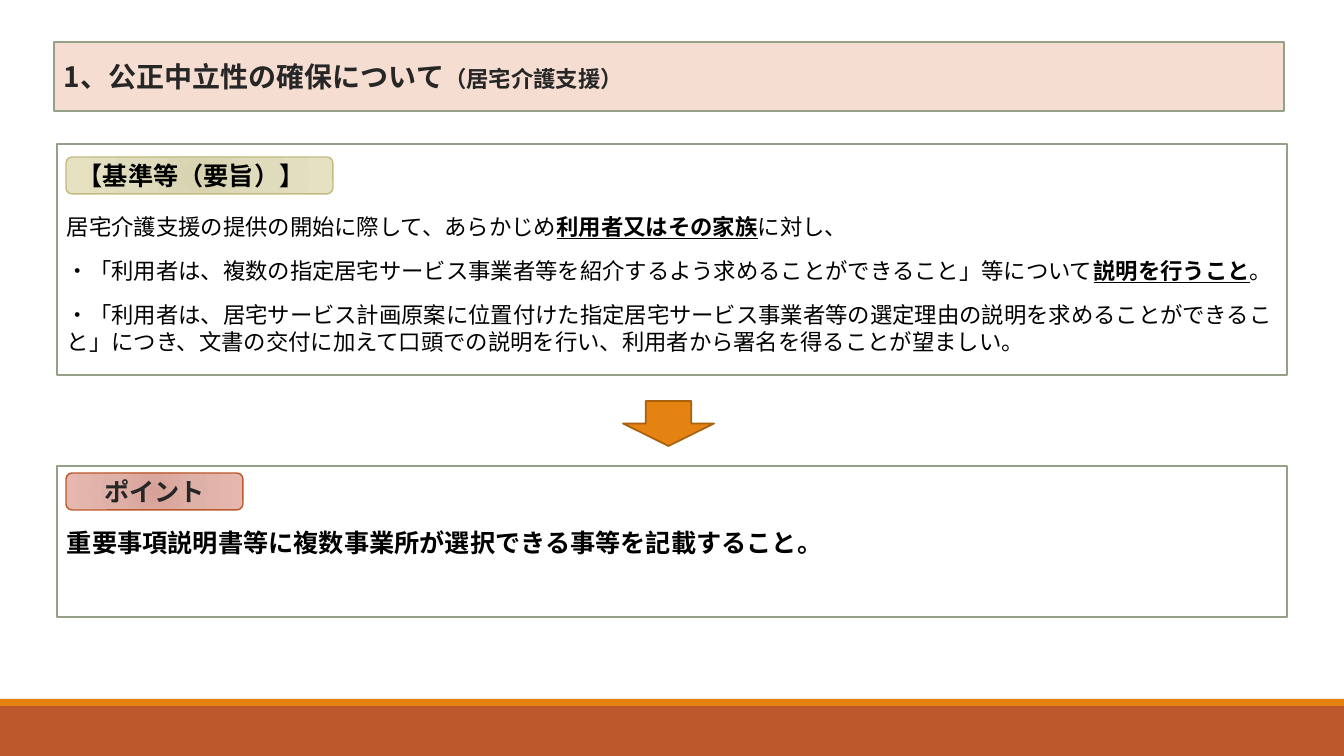
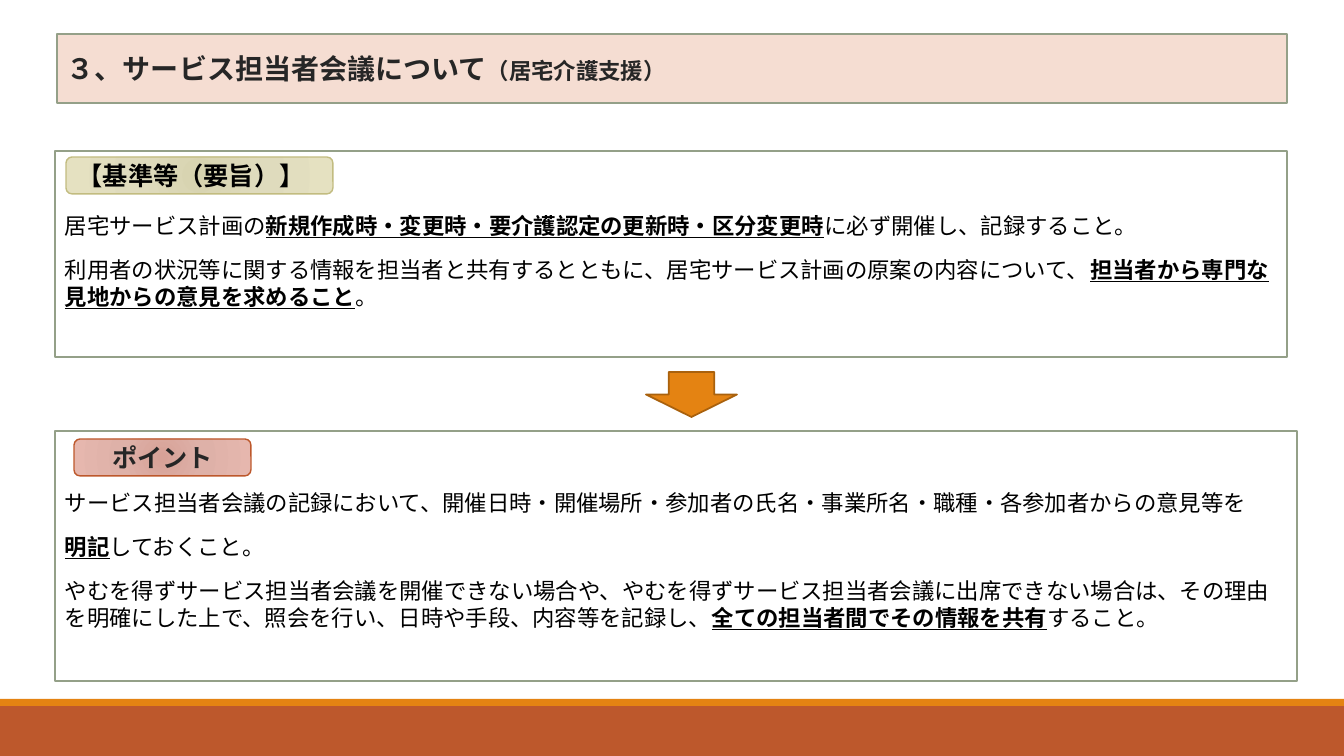
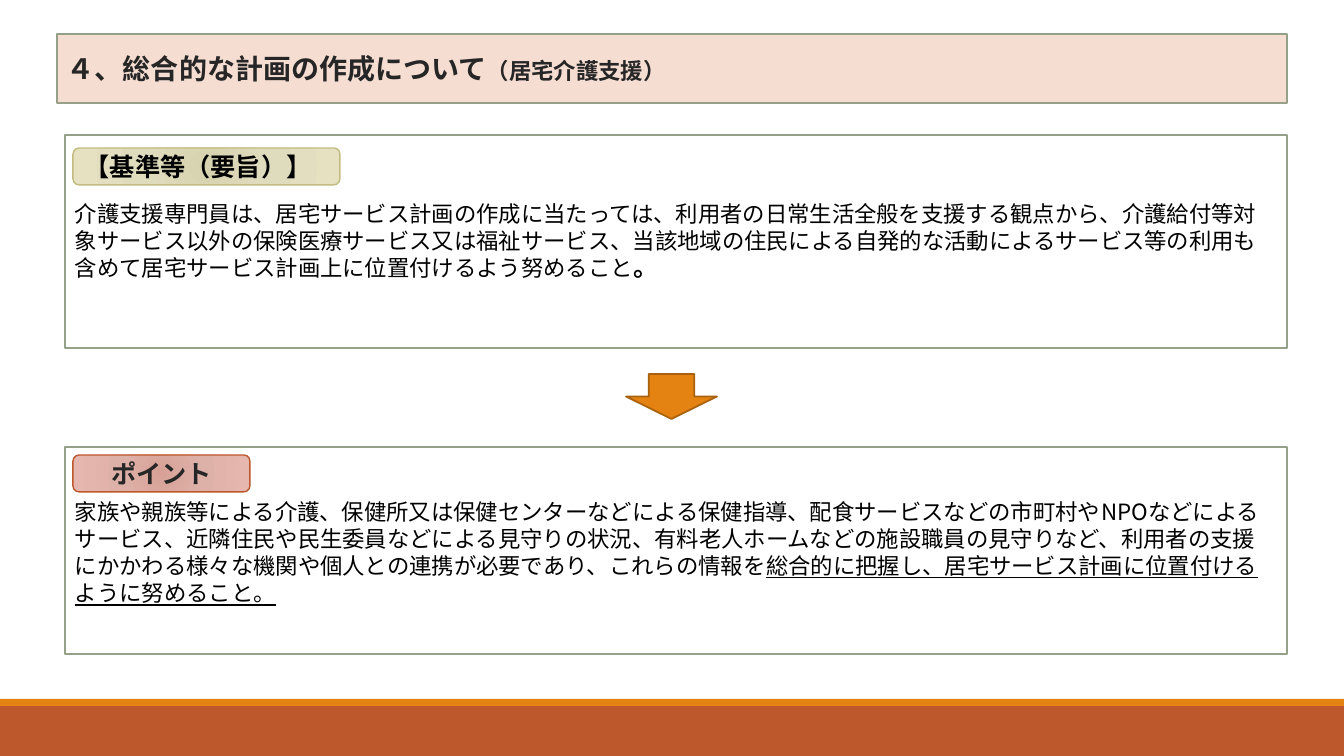
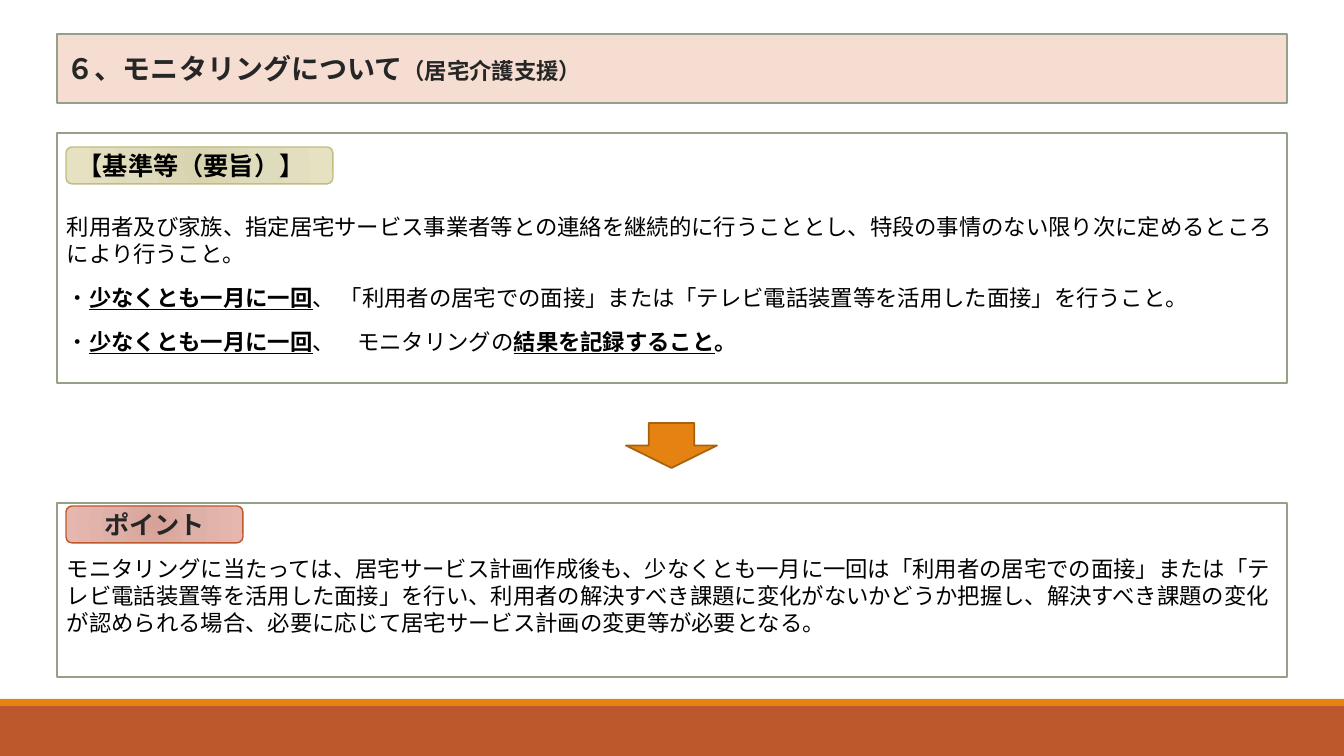
"""Build four slides on care-management standards and their key points."""
import pptx
import pptx.dml.color
import pptx.enum.shapes
import pptx.enum.text
import pptx.oxml
import pptx.oxml.ns
import pptx.util

PX = 914400 / 100.8
COLORS = {
    "footer": "BD582C", "stripe": "E48312", "arrow_line": "A9610D",
    "title_fill": "F5DDD2", "sage": "94A088", "white": "FFFFFF",
    "dark": "262626", "black": "000000", "khaki": "C2BC80",
}
GRADIENTS = {
    "standards": ["D7D3AF", "DFDBBD", "E5E1C1"],
    "point": ["D7A197", "DEB1A8", "E6B7AE"],
}
JP = "Noto Sans CJK JP"
STYLES = {
    "title": (20, True, False, JP),
    "subtitle": (16, True, False, JP),
    "label": (18, True, False, JP),
    "lead": (18, True, False, "Calibri"),
    "plain": (16, False, False, JP),
    "bold": (16, True, False, JP),
    "underline": (16, False, True, JP),
    "key": (16, True, True, JP),
}
RECT = pptx.enum.shapes.MSO_SHAPE.RECTANGLE
ROUNDED = pptx.enum.shapes.MSO_SHAPE.ROUNDED_RECTANGLE
ARROW = pptx.enum.shapes.MSO_SHAPE.DOWN_ARROW
ALIGN = pptx.enum.text.PP_ALIGN
ANCHOR = pptx.enum.text.MSO_ANCHOR

PAGES = [
    {
        "title": "1、公正中立性の確保について", "title_at": (54, 42), "arrow_at": (623, 401),
        "standards": {
            "box": (57, 144, 1230, 231), "label_at": (66, 157), "text_top": 213,
            "text": [
                [("plain", "居宅介護支援の提供の開始に際して、あらかじめ"),
                 ("key", "利用者又はその家族"), ("plain", "に対し、")],
                [("plain", "・「利用者は、複数の指定居宅サービス事業者等を紹介するよう求めることができること」等について"),
                 ("key", "説明を行うこと"), ("plain", "。")],
                [("plain", "・「利用者は、居宅サービス計画原案に位置付けた指定居宅サービス事業者等の選定理由の説明を求めることができること」につき、文書の交付に加えて口頭での説明を行い、利用者から署名を得ることが望ましい。")],
            ],
        },
        "point": {
            "box": (57, 466, 1230, 151), "label_at": (66, 473), "text_top": 531,
            "text": [[("lead", "重要事項説明書等に複数事業所が選択できる事等を記載すること。")]],
        },
    },
    {
        "title": "３、サービス担当者会議について", "title_at": (57, 34), "arrow_at": (646, 372),
        "standards": {
            "box": (55, 151, 1232, 206), "label_at": (66, 157), "text_top": 212,
            "text": [
                [("plain", "居宅サービス計画の"),
                 ("key", "新規作成時・変更時・要介護認定の更新時・区分変更時"),
                 ("plain", "に必ず開催し、記録すること。")],
                [("plain", "利用者の状況等に関する情報を担当者と共有するとともに、居宅サービス計画の原案の内容について、"),
                 ("key", "担当者から専門な見地からの意見を求めること"), ("plain", "。")],
            ],
        },
        "point": {
            "box": (55, 431, 1242, 250), "label_at": (74, 439), "text_top": 489,
            "text": [
                [("plain", "サービス担当者会議の記録において、開催日時・開催場所・参加者の氏名・事業所名・職種・各参加者からの意見等を")],
                [("key", "明記"), ("plain", "しておくこと。")],
                [("plain", "やむを得ずサービス担当者会議を開催できない場合や、やむを得ずサービス担当者会議に出席できない場合は、その理由を明確にした上で、照会を行い、日時や手段、内容等を記録し、"),
                 ("key", "全ての担当者間でその情報を共有"), ("plain", "すること。")],
            ],
        },
    },
    {
        "title": "４、総合的な計画の作成について", "title_at": (57, 34), "arrow_at": (626, 374),
        "standards": {
            "box": (65, 135, 1222, 213), "label_at": (73, 148), "text_top": 200,
            "text": [
                [("plain", "介護支援専門員は、居宅サービス計画の作成に当たっては、利用者の日常生活全般を支援する観点から、介護給付等対象サービス以外の保険医療サービス又は福祉サービス、当該地域の住民による自発的な活動によるサービス等の利用も含めて居宅サービス計画上に位置付けるよう努めること"),
                 ("label", "。")],
            ],
        },
        "point": {
            "box": (65, 447, 1222, 207), "label_at": (73, 455), "text_top": 498,
            "text": [
                [("plain", "家族や親族等による介護、保健所又は保健センターなどによる保健指導、配食サービスなどの市町村やNPOなどによるサービス、近隣住民や民生委員などによる見守りの状況、有料老人ホームなどの施設職員の見守りなど、利用者の支援にかかわる様々な機関や個人との連携が必要であり、これらの情報を"),
                 ("underline", "総合的に把握し、居宅サービス計画に位置付けるように努めること。")],
            ],
        },
    },
    {
        "title": "６、モニタリングについて", "title_at": (57, 34), "arrow_at": (626, 423),
        "standards": {
            "box": (57, 133, 1230, 250), "label_at": (66, 147), "text_top": 213,
            "text": [
                [("plain", "利用者及び家族、指定居宅サービス事業者等との連絡を継続的に行うこととし、特段の事情のない限り次に定めるところにより行うこと。")],
                [("plain", "・"), ("key", "少なくとも一月に一回"),
                 ("plain", "、 「利用者の居宅での面接」または「テレビ電話装置等を活用した面接」を行うこと。")],
                [("plain", "・"), ("key", "少なくとも一月に一回"), ("plain", "、　モニタリングの"),
                 ("key", "結果を記録すること"), ("bold", "。")],
            ],
        },
        "point": {
            "box": (57, 503, 1230, 174), "label_at": (66, 506), "text_top": 555,
            "text": [
                [("plain", "モニタリングに当たっては、居宅サービス計画作成後も、少なくとも一月に一回は「利用者の居宅での面接」または「テレビ電話装置等を活用した面接」を行い、利用者の解決すべき課題に変化がないかどうか把握し、解決すべき課題の変化が認められる場合、必要に応じて居宅サービス計画の変更等が必要となる。")],
            ],
        },
    },
]
LABELS = {
    "standards": ("【基準等（要旨）】", 267, "khaki", "black", ALIGN.LEFT),
    "point": ("ポイント", 177, "footer", "dark", ALIGN.CENTER),
}


def add_box(slide, kind, box, fill=None, line=None, weight=1.25):
    """Add a shadowless shape at a px box, with an optional fill and outline."""
    shape = slide.shapes.add_shape(kind, *(round(n * PX) for n in box))
    shape.shadow.inherit = False
    if fill:
        shape.fill.solid()
        shape.fill.fore_color.rgb = pptx.dml.color.RGBColor.from_string(COLORS[fill])
    else:
        shape.fill.background()
    if line:
        shape.line.color.rgb = pptx.dml.color.RGBColor.from_string(COLORS[line])
        shape.line.width = pptx.util.Pt(weight)
    else:
        shape.line.fill.background()
    return shape


def write(paragraph, runs, color, align=ALIGN.LEFT):
    """Write styled runs into a paragraph."""
    paragraph.alignment = align
    for style, words in runs:
        size, bold, underline, typeface = STYLES[style]
        run = paragraph.add_run()
        run.text = words
        run.font.size = pptx.util.Pt(size)
        run.font.bold = bold
        run.font.underline = underline
        run.font.color.rgb = pptx.dml.color.RGBColor.from_string(COLORS[color])
        run.font.name = typeface
        east_asian = pptx.oxml.parse_xml(
            f'<a:ea {pptx.oxml.ns.nsdecls("a")} typeface="{JP}"/>')
        run.font._element.find(pptx.oxml.ns.qn("a:latin")).addnext(east_asian)


deck = pptx.Presentation()
deck.slide_width = round(1344 * PX)
deck.slide_height = round(756 * PX)

for page in PAGES:
    slide = deck.slides.add_slide(deck.slide_layouts[6])
    add_box(slide, RECT, (0, 706, 1344, 50), "footer")
    add_box(slide, RECT, (0, 699, 1344, 7), "stripe")

    title = add_box(slide, RECT, (*page["title_at"], 1230, 69), "title_fill", "sage", 1)
    title.text_frame.vertical_anchor = ANCHOR.MIDDLE
    write(title.text_frame.paragraphs[0],
          [("title", page["title"]), ("subtitle", "（居宅介護支援）")], "dark")

    add_box(slide, ARROW, (*page["arrow_at"], 91, 45), "stripe", "arrow_line")

    for section, (caption, width, outline, ink, align) in LABELS.items():
        content = page[section]
        panel = add_box(slide, RECT, content["box"], "white", "sage")
        frame = panel.text_frame
        frame.word_wrap = True
        frame.vertical_anchor = ANCHOR.TOP
        frame.margin_top = round((content["text_top"] - content["box"][1]) * PX)
        for index, runs in enumerate(content["text"]):
            paragraph = frame.add_paragraph() if index else frame.paragraphs[0]
            paragraph.line_spacing = pptx.util.Pt(19.3)
            paragraph.space_after = pptx.util.Pt(12)
            write(paragraph, runs, "black")

        label = add_box(slide, ROUNDED, (*content["label_at"], width, 37), None, outline, 1)
        stops = "".join(
            f'<a:gs pos="{place}"><a:srgbClr val="{tint}"/></a:gs>'
            for place, tint in zip((0, 45000, 100000), GRADIENTS[section]))
        gradient = pptx.oxml.parse_xml(
            f'<a:gradFill {pptx.oxml.ns.nsdecls("a")}><a:gsLst>{stops}</a:gsLst>'
            '<a:path path="circle"><a:fillToRect l="100000" t="100000" r="100000" b="100000"/>'
            '</a:path></a:gradFill>')
        properties = label._element.spPr
        properties.replace(properties.find(pptx.oxml.ns.qn("a:noFill")), gradient)
        label.text_frame.vertical_anchor = ANCHOR.MIDDLE
        write(label.text_frame.paragraphs[0], [("label", caption)], ink, align)

deck.save("out.pptx")
